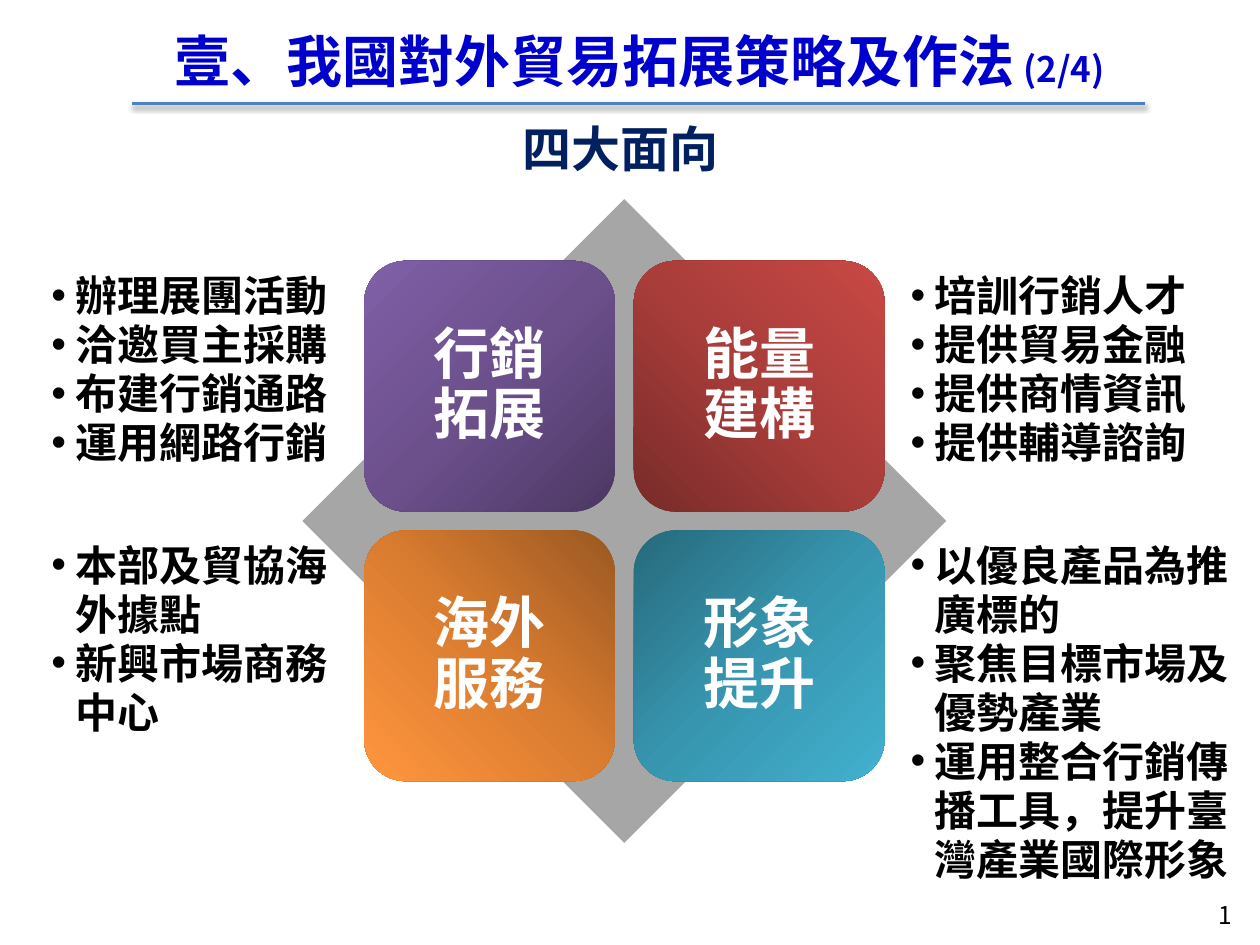
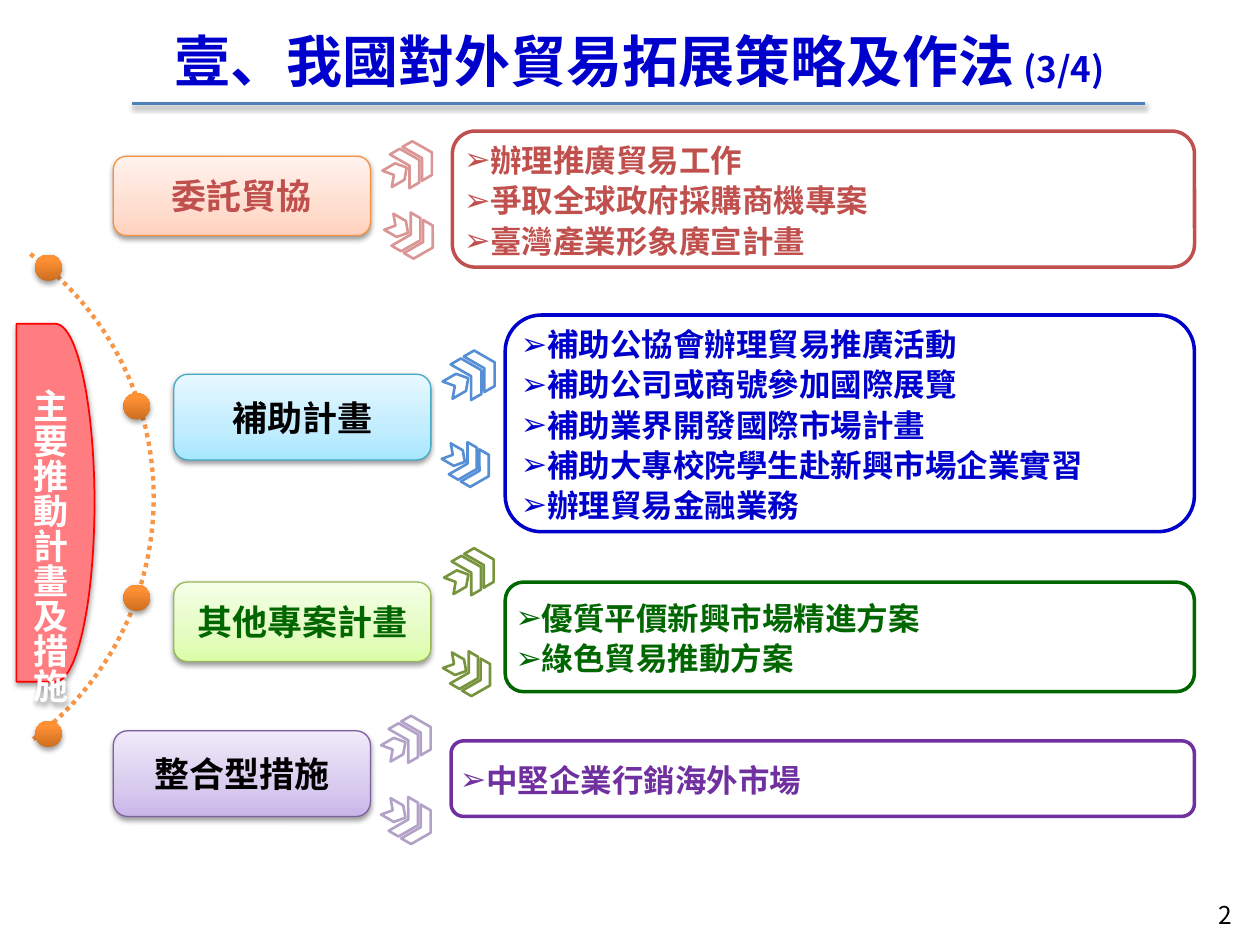
import math

from lxml import etree
from pptx import Presentation
from pptx import util as u
from pptx.dml.color import RGBColor
from pptx.enum import dml, shapes, text
from pptx.oxml.ns import qn

FONT = "Noto Sans CJK SC"
TITLE = "壹、我國對外貿易拓展策略及作法"
COLORS = {
    "white": "FFFFFF", "black": "000000", "gray": "A6A6A6", "navy": "002060",
    "blue": "0000CC", "red": "C0504D", "green": "006600", "purple": "7030A0",
    "rule": "4F81BD", "orange": "F79646", "banner": "FF7C80", "banner_line": "FF0000",
    "pink_chev": "D99694", "blue_chev": "558ED5", "green_chev": "77933C",
    "purple_chev": "B3A2C7", "orange_line": "F69240", "cyan_line": "46AAC5",
    "lime_line": "98B955", "violet_line": "7D60A0",
}
# Gradients: (angle, [(position in percent, colour), ...])
GRADIENTS = {
    "purple_tile": (225, [(0, "4C3863"), (50, "6C508C"), (100, "805FA7")]),
    "red_tile": (315, [(0, "772B29"), (50, "A93D3A"), (100, "C94844")]),
    "orange_tile": (135, [(0, "9A5822"), (50, "DB7D30"), (100, "FF953E")]),
    "teal_tile": (45, [(0, "27697B"), (50, "3795AF"), (100, "42B1CF")]),
    "peach": (270, [(0, "FFD2BD"), (35, "FFDED0"), (100, "FFF2ED")]),
    "sky": (270, [(0, "A7E6FF"), (35, "C1EDFF"), (100, "E7F8FF")]),
    "lime": (270, [(0, "DAFDA7"), (35, "E4FCC2"), (100, "F5FFE7")]),
    "violet": (270, [(0, "C9B5E8"), (35, "D8CBEE"), (100, "F0EAF9")]),
    "dot": (270, [(0, "CC6E20"), (80, "FF9034"), (100, "FF9136")]),
}
SHAPE = shapes.MSO_SHAPE
CENTER, RIGHT = text.PP_ALIGN.CENTER, text.PP_ALIGN.RIGHT


def rgb(name):
    return RGBColor.from_string(COLORS[name])


def inches(values):
    return [u.Inches(v) for v in values]


def add_color(parent, value):
    return etree.SubElement(parent, qn("a:srgbClr"), val=value)


def add_shadow(effects, opacity=38, blur=3.1, dist=1.6):
    outer = etree.SubElement(effects, qn("a:outerShdw"), blurRad=str(u.Pt(blur)),
                             dist=str(u.Pt(dist)), dir="5400000",
                             algn="t", rotWithShape="0")
    color = add_color(outer, COLORS["black"])
    etree.SubElement(color, qn("a:alpha"), val=str(opacity * 1000))


def set_gradient(sp, name):
    angle, stops = GRADIENTS[name]
    sp.fill.gradient()
    sp.fill.gradient_angle = 360 - angle
    stop_list = sp._element.spPr.find(".//" + qn("a:gsLst"))
    for old in list(stop_list):
        stop_list.remove(old)
    for position, value in stops:
        stop = etree.SubElement(stop_list, qn("a:gs"), pos=str(position * 1000))
        add_color(stop, value)


def add_run(p, words, size, color, bold=True, shadow=False):
    r = p.add_run()
    r.text = words
    r.font.size, r.font.bold, r.font.name = u.Pt(size), bold, FONT
    r.font.color.rgb = rgb(color)
    props = r.font._element
    etree.SubElement(props, qn("a:ea"), typeface=FONT)
    if shadow:
        effects = etree.Element(qn("a:effectLst"))
        props.find(qn("a:solidFill")).addnext(effects)
        add_shadow(effects, opacity=43, dist=3)
    return r


def write(tf, lines, size=18, color="black", bold=True, align=None, spacing=None,
          bullet=None, indent=0, anchor=None, insets=None, wrap=True, shadow=False):
    """Fill a text frame with one paragraph per line; "\n" breaks a line."""
    tf.word_wrap = wrap
    if anchor is not None:
        tf.vertical_anchor = anchor
    if insets:
        tf.margin_left = tf.margin_right = u.Inches(insets[0])
        tf.margin_top = tf.margin_bottom = u.Inches(insets[1])
    for i, line in enumerate([lines] if isinstance(lines, str) else lines):
        p = tf.add_paragraph() if i else tf.paragraphs[0]
        if bullet:
            props = p._p.get_or_add_pPr()
            props.set("marL", str(u.Inches(indent)))
            props.set("indent", str(-u.Inches(indent)))
            etree.SubElement(props, qn("a:buFont"), typeface="Arial")
            etree.SubElement(props, qn("a:buChar"), char=bullet)
        p.alignment = align
        p.line_spacing = spacing
        for j, piece in enumerate(line.split("\n")):
            if j:
                p.add_line_break()
            add_run(p, piece, size, color, bold, shadow)


class Deck:
    def __init__(self):
        self.prs = Presentation()
        self.prs.slide_width, self.prs.slide_height = inches((10, 7.5))
        self.s = None

    def new_slide(self, number):
        self.s = self.prs.slides.add_slide(self.prs.slide_layouts[6])
        box = self.text(7.55, 7.09, 2.33, 0.52, str(number), size=14, bold=False,
                        align=RIGHT)
        field = box.text_frame.paragraphs[0].runs[0]._r
        field.tag = qn("a:fld")
        field.set("id", "{B6F15528-21DE-4FAA-801E-634DDDAF4B2B}")
        field.set("type", "slidenum")

    def title(self, part):
        self.rule(1.05, 9.09, 0.82)
        sp = self.shape(SHAPE.FLOWCHART_ALTERNATE_PROCESS, 0.98, 0.13, 8.19, 0.69)
        write(sp.text_frame, TITLE, size=32, color="blue", align=CENTER,
              anchor=text.MSO_ANCHOR.MIDDLE, wrap=False, shadow=True)
        add_run(sp.text_frame.paragraphs[0], f" ({part}/4)", 20, "blue", shadow=True)

    def rule(self, left, right, y):
        line = self.s.shapes.add_connector(shapes.MSO_CONNECTOR.STRAIGHT,
                                           *inches((left, y, right, y)))
        line.line.color.rgb, line.line.width = rgb("rule"), u.Pt(1.75)
        effects = etree.SubElement(line._element.spPr, qn("a:effectLst"))
        add_shadow(effects, opacity=35, dist=1.8)

    def text(self, x, y, w, h, lines, **fmt):
        box = self.s.shapes.add_textbox(*inches((x, y, w, h)))
        write(box.text_frame, lines, **fmt)
        return box

    def shape(self, kind, x, y, w, h, fill=None, line=None, width=1, shadow=False,
              adj=None, rot=0):
        sp = self.s.shapes.add_shape(kind, *inches((x, y, w, h)))
        self.style(sp, fill, line, width, shadow)
        if adj is not None:
            sp.adjustments[0] = adj
        sp.rotation = rot
        return sp

    def style(self, sp, fill, line, width, shadow=False):
        if fill in GRADIENTS:
            set_gradient(sp, fill)
        elif fill:
            sp.fill.solid()
            sp.fill.fore_color.rgb = rgb(fill)
        else:
            sp.fill.background()
        if line:
            sp.line.color.rgb, sp.line.width = rgb(line), u.Pt(width)
        else:
            sp.line.fill.background()
        sp.shadow.inherit = False
        if shadow:
            add_shadow(sp._element.spPr.find(qn("a:effectLst")))

    def label(self, x, y, h, words, fill, line, color):
        sp = self.shape(SHAPE.ROUNDED_RECTANGLE, x, y, 2.04, h, fill, line, 0.75, True)
        write(sp.text_frame, words, size=20, color=color, align=CENTER,
              anchor=text.MSO_ANCHOR.MIDDLE, wrap=False)

    def list_box(self, x, y, h, lines, color, indent=0):
        sp = self.shape(SHAPE.ROUNDED_RECTANGLE, x, y, 9.48 - x, h, None, color, 2)
        write(sp.text_frame, lines, color=color, spacing=u.Pt(23), bullet="➢",
              align=text.PP_ALIGN.LEFT, indent=indent, insets=(0.04, 0.05),
              anchor=text.MSO_ANCHOR.MIDDLE)

    def chevrons(self, x, y, color, up, scale=1.0):
        """Two tall chevrons and a short one, trailing left from (x, y)."""
        offsets = (0, 0.06, 0.2) if up else (0, -0.06, -0.04)
        for i, dy in enumerate(offsets):
            height, adj = (0.15, 0.42) if i == 2 else (0.31, 0.5)
            self.shape(SHAPE.CHEVRON, x - 0.1 * i * scale, y + dy * scale,
                       0.18 * scale, height * scale, "white", color, 1.5,
                       adj=adj, rot=330 if up else 30)

    def dotted_arc(self, cx, cy, radius, half_angle, steps=48):
        points = []
        for i in range(steps + 1):
            a = math.radians(half_angle * (2 * i / steps - 1))
            points.append(inches((cx + radius * math.cos(a), cy + radius * math.sin(a))))
        builder = self.s.shapes.build_freeform(*points[0])
        builder.add_line_segments(points[1:], close=False)
        arc = builder.convert_to_shape()
        self.style(arc, None, "orange", 2.5)
        arc.line.dash_style = dml.MSO_LINE.ROUND_DOT


def four_aspects(deck):
    deck.new_slide(4)
    # Diamond with four tiles
    deck.shape(SHAPE.DIAMOND, 2.4, 1.58, 5.11, 5.11, "gray")
    tiles = [("行銷\n拓展", "purple_tile"), ("能量\n建構", "red_tile"),
             ("海外\n服務", "orange_tile"), ("形象\n提升", "teal_tile")]
    for i, (words, fill) in enumerate(tiles):
        row, col = divmod(i, 2)
        sp = deck.shape(SHAPE.ROUNDED_RECTANGLE, 2.89 + 2.14 * col, 2.07 + 2.14 * row,
                        1.99, 1.99, fill)
        write(sp.text_frame, words, size=32, color="white", align=CENTER, spacing=0.9,
              anchor=text.MSO_ANCHOR.MIDDLE, insets=(0.13, 0.13))
    deck.text(4.04, 1.08, 1.77, 0.4, "四大面向", size=28, color="navy",
              align=CENTER, spacing=u.Pt(20), wrap=False)
    # Bullet lists beside the tiles
    lists = [
        (0.31, 2.1, 2.4, 1.67, ["辦理展團活動", "洽邀買主採購", "布建行銷通路", "運用網路行銷"]),
        (7.13, 2.1, 2.87, 1.67, ["培訓行銷人才", "提供貿易金融", "提供商情資訊", "提供輔導諮詢"]),
        (0.31, 4.24, 2.4, 1.67, ["本部及貿協海外據點", "新興市場商務中心"]),
        (7.13, 4.24, 2.87, 2.85, ["以優良產品為推廣標的", "聚焦目標市場及優勢產業",
                                  "運用整合行銷傳播工具，提升臺灣產業國際形象"]),
    ]
    for *place, lines in lists:
        deck.text(*place, lines, size=24, spacing=u.Pt(28), bullet="•", indent=0.19)
    deck.title(2)


def main_programs(deck):
    deck.new_slide(5)
    # Arc with four dots
    deck.dotted_arc(-1.18, 3.95, 2.4, 53.7)
    for x, y in [(0.28, 2.02), (0.98, 3.12), (0.98, 4.64), (0.28, 5.72)]:
        deck.shape(SHAPE.OVAL, x, y, 0.21, 0.21, "dot", shadow=True)
    # Program labels
    labels = [
        (0.9, 1.24, 0.63, "委託貿協", "peach", "orange_line", "red"),
        (1.38, 2.97, 0.68, "補助計畫", "sky", "cyan_line", "black"),
        (1.38, 4.62, 0.63, "其他專案計畫", "lime", "lime_line", "green"),
        (0.9, 5.8, 0.68, "整合型措施", "violet", "violet_line", "black"),
    ]
    for label in labels:
        deck.label(*label)
    # Chevrons: upper pair member, then lower
    chevrons = [
        (3.26, 1.1, "pink_chev", True, 1), (3.27, 1.77, "pink_chev", False, 0.98),
        (3.75, 2.76, "blue_chev", True, 1.05), (3.72, 3.59, "blue_chev", False, 0.95),
        (3.75, 4.33, "green_chev", True, 1), (3.73, 5.25, "green_chev", False, 0.95),
        (3.25, 5.66, "purple_chev", True, 1), (3.25, 6.41, "purple_chev", False, 1),
    ]
    for group in chevrons:
        deck.chevrons(*group)
    # Measures of each program
    deck.list_box(3.59, 1.04, 1.08, ["辦理推廣貿易工作", "爭取全球政府採購商機專案",
                                     "臺灣產業形象廣宣計畫"], "red")
    deck.list_box(4.01, 2.5, 1.72, ["補助公協會辦理貿易推廣活動", "補助公司或商號參加國際展覽",
                                    "補助業界開發國際市場計畫",
                                    "補助大專校院學生赴新興市場企業實習",
                                    "辦理貿易金融業務"], "blue")
    deck.list_box(4.01, 4.62, 0.87, ["優質平價新興市場精進方案", "綠色貿易推動方案"], "green")
    deck.list_box(3.58, 5.88, 0.6, ["中堅企業行銷海外市場"], "purple", indent=0.2)
    deck.title(3)
    # Vertical banner
    banner = deck.shape(SHAPE.FLOWCHART_DELAY, 0.13, 2.57, 0.62, 2.84, "banner",
                        "banner_line", 1, True)
    write(banner.text_frame, "主要推動計畫及措施", size=20, color="white", align=CENTER,
          anchor=text.MSO_ANCHOR.MIDDLE, wrap=False, shadow=True)
    banner.text_frame._txBody.bodyPr.set("vert", "eaVert")


def main():
    deck = Deck()
    four_aspects(deck)
    main_programs(deck)
    deck.prs.save("out.pptx")


if __name__ == "__main__":
    main()
